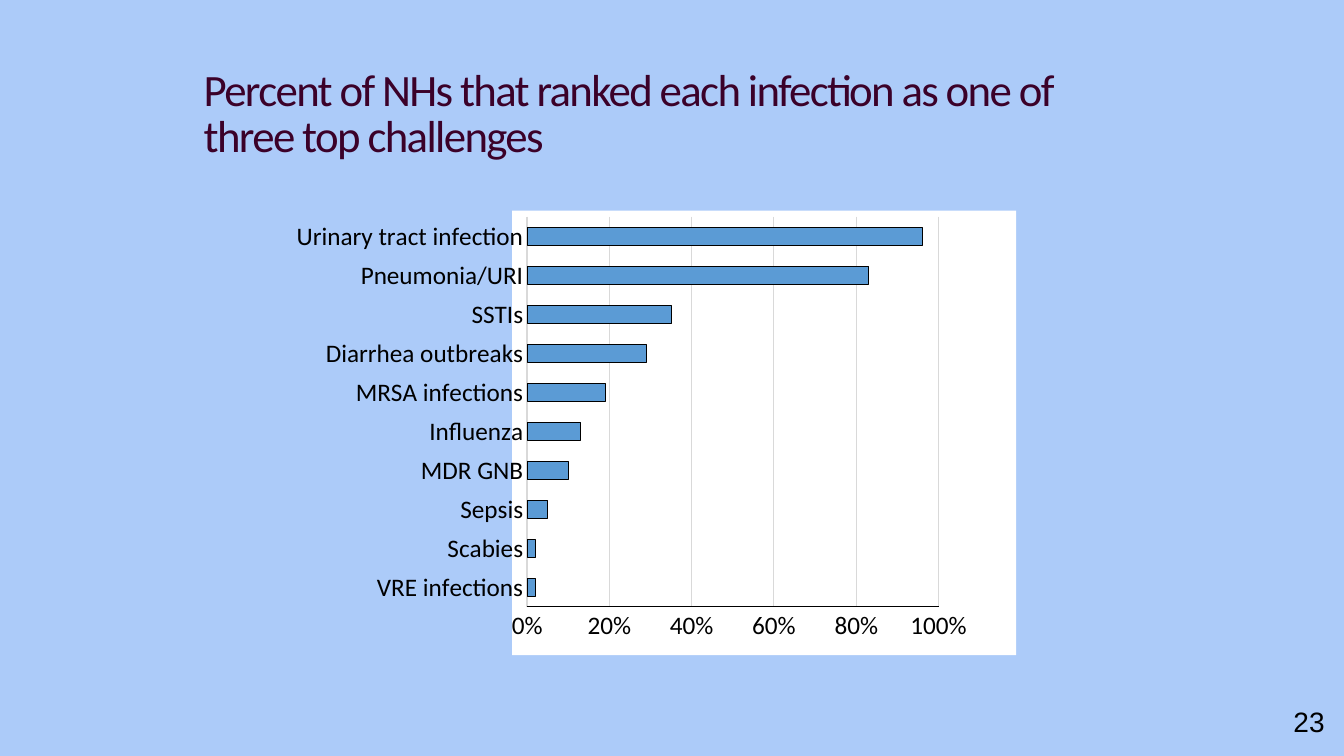
"""Build the slide ranking nursing home infection challenges."""
from lxml.etree import SubElement
from pptx import Presentation
from pptx.chart.data import CategoryChartData
from pptx.dml.color import RGBColor
from pptx.enum.chart import XL_CHART_TYPE, XL_TICK_MARK
from pptx.enum.shapes import MSO_SHAPE
from pptx.enum.text import MSO_ANCHOR, MSO_AUTO_SIZE, PP_ALIGN
from pptx.oxml.ns import qn
from pptx.util import Inches, Pt

TITLE = "Percent of NHs that ranked each infection as one of three top challenges"
PAGE = "23"
INFECTIONS = [
    ("Urinary tract infection", 0.96),
    ("Pneumonia/URI", 0.83),
    ("SSTIs", 0.35),
    ("Diarrhea outbreaks", 0.29),
    ("MRSA infections", 0.19),
    ("Influenza", 0.13),
    ("MDR GNB", 0.10),
    ("Sepsis", 0.05),
    ("Scabies", 0.02),
    ("VRE infections", 0.02),
]
BOXES = {
    "panel": (5.08, 2.09, 5, 4.41),
    "title": (1.92, 0.3, 9.5, 1.7),
    "chart": (-1.09, 2, 10.76, 4.74),
    "page": (12.73, 6.94, 0.51, 0.44),
}
PLOT = (5.23, 2.15, 4.08, 3.87)
THEME = {
    "bg": "ACCBF9", "panel": "FFFFFF", "title": "3B0129", "text": "000000",
    "bar": "5B9BD5", "grid": "D9D9D9", "font": "Calibri", "page_font": "Arial",
    "title_size": 32, "axis_size": 18, "page_size": 20,
}


def box(name):
    return [Inches(v) for v in BOXES[name]]


def color(name):
    return RGBColor.from_string(THEME[name])


def style_font(font, face, size, ink):
    font.name, font.size, font.color.rgb = THEME[face], Pt(THEME[size]), color(ink)
    font.bold = False


def style_line(line, ink, width):
    line.color.rgb = color(ink)
    line.width = Pt(width)


def add_title(s):
    title = s.shapes.title
    title.left, title.top, title.width, title.height = box("title")
    tf = title.text_frame
    tf.auto_size, tf.vertical_anchor = MSO_AUTO_SIZE.NONE, MSO_ANCHOR.MIDDLE
    p = tf.paragraphs[0]
    p.alignment, p.line_spacing = PP_ALIGN.LEFT, 0.85
    r = p.add_run()
    r.text = TITLE
    style_font(r.font, "font", "title_size", "title")
    r.font._element.set("spc", "-120")


def add_panel(s):
    sp = s.shapes.add_shape(MSO_SHAPE.RECTANGLE, *box("panel"))
    sp.shadow.inherit = False
    sp.fill.solid()
    sp.fill.fore_color.rgb = color("panel")
    sp.line.fill.background()


def place_plot(chart):
    area = chart._chartSpace.find(".//" + qn("c:plotArea"))
    for old in area.findall(qn("c:layout")):
        area.remove(old)
    layout = SubElement(area, qn("c:layout"))
    area.insert(0, layout)
    manual = SubElement(layout, qn("c:manualLayout"))
    left, top, width, height = BOXES["chart"]
    x, y, w, h = PLOT
    settings = {
        "layoutTarget": "inner", "xMode": "edge", "yMode": "edge",
        "x": (x - left) / width, "y": (y - top) / height,
        "w": w / width, "h": h / height,
    }
    for tag, value in settings.items():
        SubElement(manual, qn("c:" + tag)).set("val", str(value))


def add_chart(s):
    data = CategoryChartData(number_format="0%")
    names, shares = zip(*reversed(INFECTIONS))
    data.categories = names
    data.add_series("Series 1", shares)
    chart = s.shapes.add_chart(XL_CHART_TYPE.BAR_CLUSTERED, *box("chart"), data).chart
    chart.has_title = chart.has_legend = False
    style_font(chart.font, "font", "axis_size", "text")
    plot = chart.plots[0]
    plot.gap_width, plot.overlap, plot.vary_by_categories = 115, -20, False
    bars = plot.series[0].format
    bars.fill.solid()
    bars.fill.fore_color.rgb = color("bar")
    style_line(bars.line, "text", 0.75)
    for axis, ink, width in ((chart.category_axis, "grid", 1), (chart.value_axis, "text", 0.75)):
        axis.major_tick_mark = axis.minor_tick_mark = XL_TICK_MARK.NONE
        style_font(axis.tick_labels.font, "font", "axis_size", "text")
        style_line(axis.format.line, ink, width)
    chart.category_axis.has_major_gridlines = False
    scale = chart.value_axis
    scale.minimum_scale, scale.maximum_scale, scale.major_unit = 0, 1, 0.2
    scale.tick_labels.number_format = "0%"
    scale.tick_labels.number_format_is_linked = False
    scale.has_major_gridlines = True
    style_line(scale.major_gridlines.format.line, "grid", 0.75)
    place_plot(chart)


def add_page(s):
    tf = s.shapes.add_textbox(*box("page")).text_frame
    tf.word_wrap, tf.auto_size = False, MSO_AUTO_SIZE.SHAPE_TO_FIT_TEXT
    r = tf.paragraphs[0].add_run()
    r.text = PAGE
    style_font(r.font, "page_font", "page_size", "text")


def main():
    prs = Presentation()
    prs.slide_width, prs.slide_height = Inches(13.33), Inches(7.5)
    s = prs.slides.add_slide(prs.slide_layouts[5])
    s.background.fill.solid()
    s.background.fill.fore_color.rgb = color("bg")
    add_panel(s)
    add_title(s)
    add_chart(s)
    add_page(s)
    prs.save("out.pptx")


if __name__ == "__main__":
    main()
